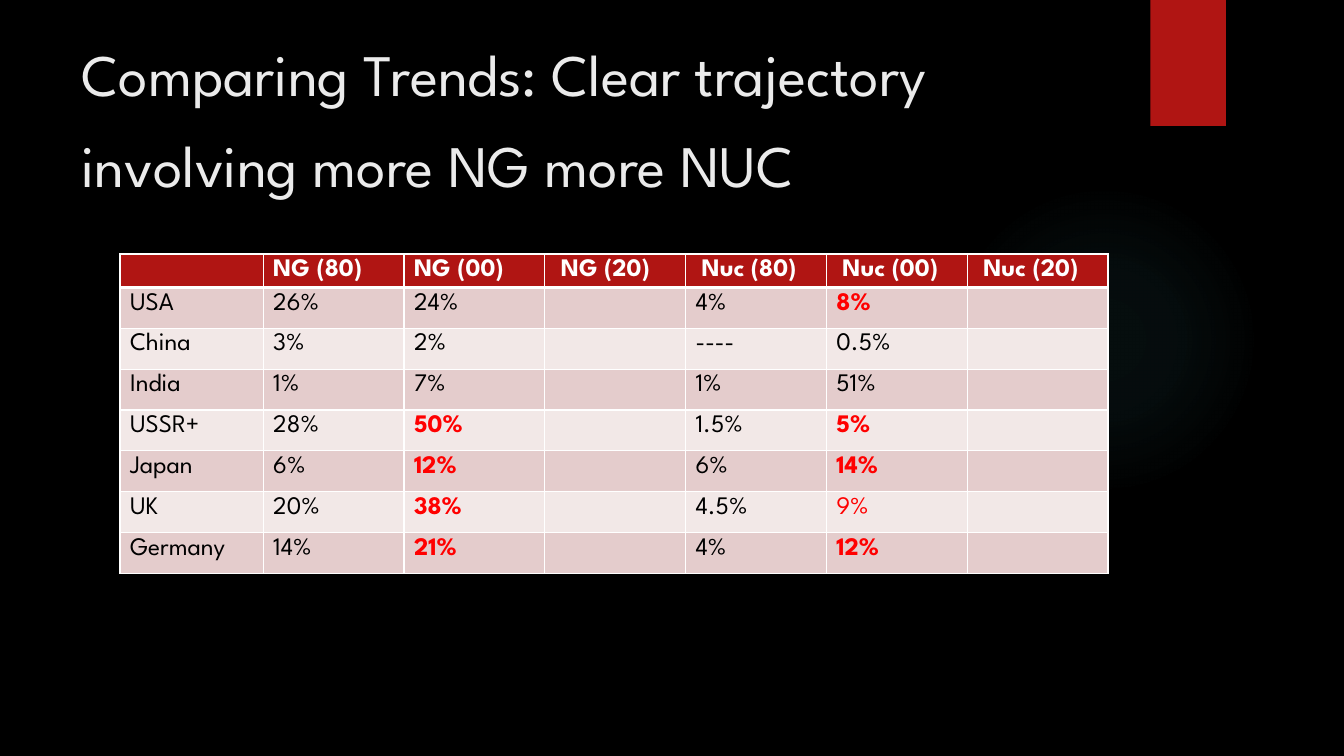
from dataclasses import dataclass

from pptx import Presentation
from pptx.dml.color import RGBColor
from pptx.enum.shapes import MSO_SHAPE
from pptx.enum.text import MSO_ANCHOR, PP_ALIGN
from pptx.oxml import parse_xml
from pptx.oxml.ns import nsdecls
from pptx.util import Inches, Pt

OVAL, RECTANGLE = MSO_SHAPE.OVAL, MSO_SHAPE.RECTANGLE
TOP, BOTTOM = MSO_ANCHOR.TOP, MSO_ANCHOR.BOTTOM
LEFT = PP_ALIGN.LEFT
TITLE_ONLY = 5


@dataclass(frozen=True)
class Theme:
    font: str = "League Spartan"
    title_size: int = 42
    table_size: int = 18
    background: str = "000000"
    title: str = "EBEBEB"
    accent: str = "B01513"
    glow: str = "50B9C1"
    white: str = "FFFFFF"
    ink: str = "000000"
    rise: str = "FF0000"
    bands: tuple = ("E4CCCC", "F2E8E7")


THEME = Theme()

HEADINGS = ["", "NG (80)", "NG (00)", "NG (20)", "Nuc (80)", "Nuc (00)", "Nuc (20)"]
FIRST_INDENTED = 3
COUNTRIES = [
    ["USA", "26%", "24%", "", "4%", "8%", ""],
    ["China", "3%", "2%", "", "----", "0.5%", ""],
    ["India", "1%", "7%", "", "1%", "51%", ""],
    ["USSR+", "28%", "50%", "", "1.5%", "5%", ""],
    ["Japan", "6%", "12%", "", "6%", "14%", ""],
    ["UK", "20%", "38%", "", "4.5%", "9%", ""],
    ["Germany", "14%", "21%", "", "4%", "12%", ""],
]
RISES = {
    ("USA", 5), ("USSR+", 2), ("USSR+", 5), ("Japan", 2), ("Japan", 5),
    ("UK", 2), ("UK", 5), ("Germany", 2), ("Germany", 5),
}
LIGHT_RISE = ("UK", 5)


def rgb(value):
    return RGBColor.from_string(value)


def add_run(paragraph, text, size, color, bold=False):
    run = paragraph.add_run()
    run.text = text
    run.font.name = THEME.font
    run.font.size = Pt(size)
    run.font.bold = bold
    run.font.color.rgb = rgb(color)


def add_plain_shape(slide, kind, box):
    shape = slide.shapes.add_shape(kind, *box)
    shape.shadow.inherit = False
    shape.line.fill.background()
    return shape


def add_glow(slide, box):
    """Draw a faint circle that fades out towards its edge."""
    glow = add_plain_shape(slide, OVAL, box)
    glow.fill.background()
    stops = "".join(
        f'<a:gs pos="{position * 1000}"><a:srgbClr val="{THEME.glow}">'
        f'<a:alpha val="{alpha * 1000}"/></a:srgbClr></a:gs>'
        for position, alpha in [(0, 7), (36, 6), (69, 0)]
    )
    gradient = parse_xml(
        f'<a:gradFill {nsdecls("a")}><a:gsLst>{stops}</a:gsLst><a:path path="circle">'
        '<a:fillToRect l="50000" t="50000" r="50000" b="50000"/></a:path></a:gradFill>'
    )
    no_fill = glow.element.spPr.find("{*}noFill")
    no_fill.getparent().replace(no_fill, gradient)


def add_ribbon(slide, box):
    ribbon = add_plain_shape(slide, RECTANGLE, box)
    ribbon.fill.solid()
    ribbon.fill.fore_color.rgb = rgb(THEME.accent)


def place_title(slide, box, text):
    title = slide.shapes.title
    title.left, title.top, title.width, title.height = box
    frame = title.text_frame
    frame.word_wrap = True
    frame.vertical_anchor = BOTTOM
    paragraph = frame.paragraphs[0]
    paragraph.alignment = LEFT
    paragraph.line_spacing = 1.3
    add_run(paragraph, text, THEME.title_size, THEME.title)
    title.element.getparent().append(title.element)


def set_borders(cell, top=1, bottom=1):
    properties = cell._tc.get_or_add_tcPr()
    widths = {"lnL": 1, "lnR": 1, "lnT": top, "lnB": bottom}
    for index, (side, width) in enumerate(widths.items()):
        properties.insert(index, parse_xml(
            f'<a:{side} {nsdecls("a")} w="{Pt(width)}"><a:solidFill>'
            f'<a:srgbClr val="{THEME.white}"/></a:solidFill></a:{side}>'
        ))


def fill_cell(cell, text, fill, color, bold):
    cell.fill.solid()
    cell.fill.fore_color.rgb = rgb(fill)
    cell.vertical_anchor = TOP
    paragraph = cell.text_frame.paragraphs[0]
    if text:
        add_run(paragraph, text, THEME.table_size, color, bold)
    else:
        paragraph._p.append(parse_xml(
            f'<a:endParaRPr {nsdecls("a")} sz="{THEME.table_size * 100}">'
            f'<a:latin typeface="{THEME.font}"/></a:endParaRPr>'
        ))


def add_trend_table(slide, box):
    left, top, width, height = box
    label_width, header_height = Inches(1.42), Inches(0.33)
    table = slide.shapes.add_table(
        len(COUNTRIES) + 1, len(HEADINGS), left, top, width, height
    ).table
    table.horz_banding = False
    for index, column in enumerate(table.columns):
        shared = (width - label_width) // (len(HEADINGS) - 1)
        column.width = shared if index else label_width
    for index, row in enumerate(table.rows):
        shared = (height - header_height) // len(COUNTRIES)
        row.height = shared if index else header_height

    for column, heading in enumerate(HEADINGS):
        cell = table.cell(0, column)
        fill_cell(cell, heading, THEME.accent, THEME.white, True)
        set_borders(cell, bottom=3)
        if column >= FIRST_INDENTED:
            cell.margin_left = Inches(0.16)

    for row, values in enumerate(COUNTRIES, start=1):
        fill = THEME.bands[(row - 1) % 2]
        for column, value in enumerate(values):
            key = (values[0], column)
            rising = key in RISES
            color = THEME.rise if rising else THEME.ink
            cell = table.cell(row, column)
            fill_cell(cell, value, fill, color, rising and key != LIGHT_RISE)
            set_borders(cell, top=3 if row == 1 else 1)


def build_trend_slide(deck):
    slide = deck.slides.add_slide(deck.slide_layouts[TITLE_ONLY])
    slide.background.fill.solid()
    slide.background.fill.fore_color.rgb = rgb(THEME.background)
    add_glow(slide, (Inches(9.41), Inches(1.83), Inches(3.08), Inches(3.08)))
    add_ribbon(slide, (Inches(11.41), 0, Inches(0.75), Inches(1.25)))
    place_title(
        slide,
        (Inches(0.71), Inches(0.5), Inches(10.29), Inches(1.53)),
        "Comparing Trends: Clear trajectory involving more NG more NUC",
    )
    add_trend_table(slide, (Inches(1.19), Inches(2.52), Inches(9.8), Inches(3.17)))


def main():
    deck = Presentation()
    deck.slide_width, deck.slide_height = Inches(13.33), Inches(7.5)
    build_trend_slide(deck)
    deck.save("out.pptx")


if __name__ == "__main__":
    main()
